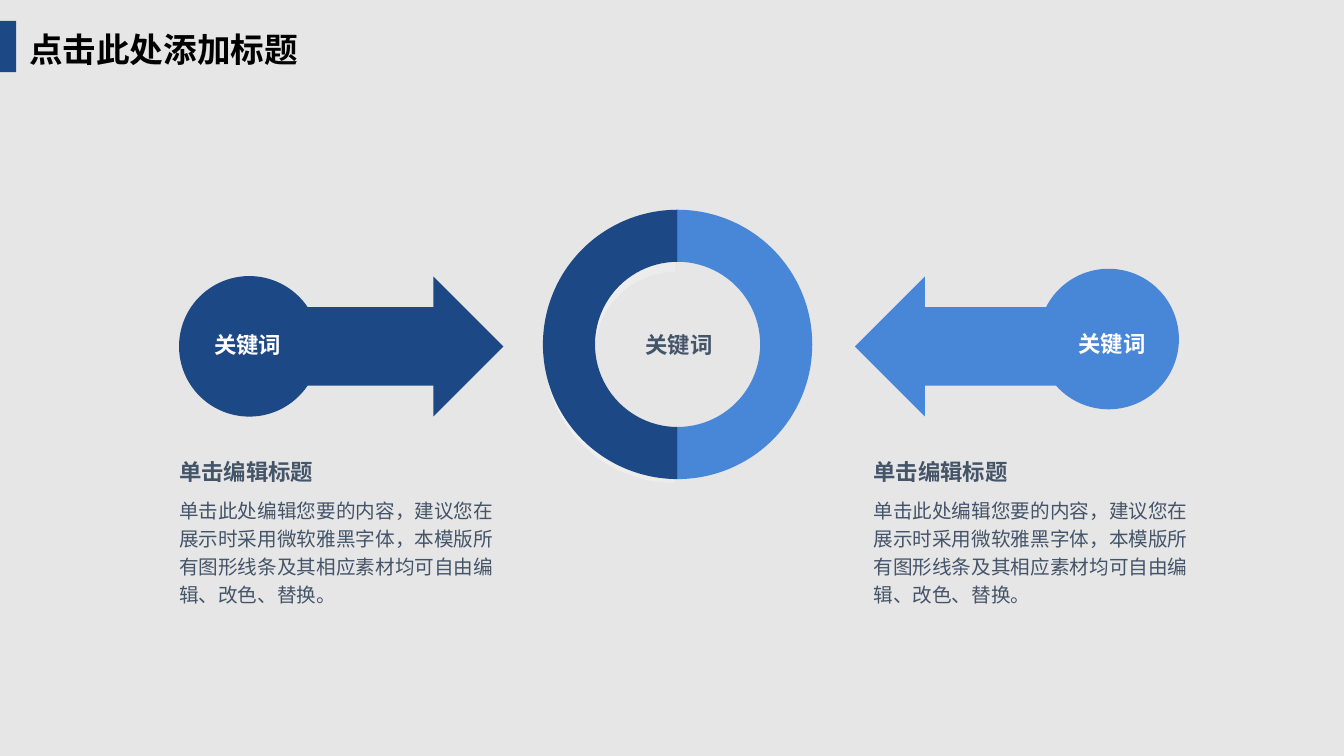
from dataclasses import dataclass

import pptx
import pptx.dml.color
import pptx.enum.shapes
import pptx.enum.text
import pptx.oxml
import pptx.oxml.ns
import pptx.util
from pptx.util import Pt

Shape = pptx.enum.shapes.MSO_SHAPE
Align = pptx.enum.text.PP_ALIGN


@dataclass(frozen=True)
class Theme:
    background: str = "E7E6E6"
    dark_blue: str = "1C4885"
    light_blue: str = "4886D8"
    slate: str = "445469"
    white: str = "FFFFFF"
    black: str = "000000"
    title_font: str = "Noto Sans CJK SC"
    body_font: str = "Arial"
    title_size: int = 24
    heading_size: int = 16
    body_size: int = 14


THEME = Theme()


@dataclass(frozen=True)
class Box:
    left: float
    top: float
    width: float
    height: float

    def lengths(self) -> tuple:
        return Pt(self.left), Pt(self.top), Pt(self.width), Pt(self.height)


@dataclass(frozen=True)
class Figure:
    kind: Shape
    box: Box
    color: str
    adjustments: tuple = ()


@dataclass(frozen=True)
class Label:
    text: str
    box: Box
    size: int = THEME.heading_size
    color: str = THEME.slate
    bold: bool = True
    align: Align = Align.LEFT
    line_spacing: float = 1.0
    font: str = THEME.body_font
    margins: tuple = (0, 0)


def rgb(color: str) -> pptx.dml.color.RGBColor:
    return pptx.dml.color.RGBColor.from_string(color)


def draw_figure(slide, figure: Figure):
    shape = slide.shapes.add_shape(figure.kind, *figure.box.lengths())
    shape.shadow.inherit = False
    shape.fill.solid()
    shape.fill.fore_color.rgb = rgb(figure.color)
    shape.line.fill.background()
    for index, value in enumerate(figure.adjustments):
        shape.adjustments[index] = value
    return shape


def draw_label(slide, label: Label) -> None:
    frame = slide.shapes.add_textbox(*label.box.lengths()).text_frame
    frame.word_wrap = True
    frame.auto_size = pptx.enum.text.MSO_AUTO_SIZE.SHAPE_TO_FIT_TEXT
    horizontal, vertical = label.margins
    frame.margin_left = frame.margin_right = Pt(horizontal)
    frame.margin_top = frame.margin_bottom = Pt(vertical)
    paragraph = frame.paragraphs[0]
    paragraph.text = label.text
    paragraph.alignment = label.align
    paragraph.line_spacing = label.line_spacing
    paragraph.font.name = label.font
    paragraph.font.size = Pt(label.size)
    paragraph.font.bold = label.bold
    paragraph.font.color.rgb = rgb(label.color)


def fade_fill(shape, color: str, start_alpha: int, end_alpha: int) -> None:
    """Fade the fill from left to right between two opacities in percent."""
    shape.fill.gradient()
    shape.fill.gradient_angle = 0
    for stop, alpha in zip(shape.fill.gradient_stops, (start_alpha, end_alpha)):
        stop.color.rgb = rgb(color)
    namespace = pptx.oxml.ns.nsdecls("a")
    colors = shape.fill._xPr.iter(pptx.oxml.ns.qn("a:srgbClr"))
    for element, alpha in zip(colors, (start_alpha, end_alpha)):
        element.append(pptx.oxml.parse_xml(f'<a:alpha {namespace} val="{alpha * 1000}"/>'))


def half_ring(box: Box, color: str, start: int, end: int, thickness: float) -> Figure:
    # Angles are stored in 60000ths of a degree, adjustments in 100000ths
    angles = (start * 0.6, end * 0.6)
    return Figure(Shape.BLOCK_ARC, box, color, (*angles, thickness / box.width))


def main() -> None:
    presentation = pptx.Presentation()
    presentation.slide_width, presentation.slide_height = Pt(960), Pt(540)
    slide = presentation.slides.add_slide(presentation.slide_layouts[6])
    slide.background.fill.solid()
    slide.background.fill.fore_color.rgb = rgb(THEME.background)

    # Title with its accent bar
    draw_label(slide, Label("点击此处添加标题", Box(13.7, 17.3, 208, 36.7), THEME.title_size,
                            THEME.black, font=THEME.title_font, margins=(7.2, 3.6)))
    draw_figure(slide, Figure(Shape.RECTANGLE, Box(0, 15, 11.5, 36.5), THEME.dark_blue))

    # Arrows and discs pointing at the ring
    arrow = (0.56, 0.5)
    disc = 100.4
    for figure in (
        Figure(Shape.RIGHT_ARROW, Box(219, 197.5, 140.6, 100), THEME.dark_blue, arrow),
        Figure(Shape.LEFT_ARROW, Box(610.7, 197.5, 149, 100), THEME.light_blue, arrow),
        Figure(Shape.OVAL, Box(741.7, 192, disc, disc), THEME.light_blue),
        Figure(Shape.OVAL, Box(127.9, 197.2, disc, disc), THEME.dark_blue),
    ):
        draw_figure(slide, figure)

    # Ring: pale highlight below two halves
    ring = Box(387.8, 149.8, 192.4, 192.4)
    highlight = draw_figure(slide, half_ring(Box(388.8, 158.4, 186.5, 186.5), THEME.white, 90, 270, 36))
    fade_fill(highlight, THEME.white, 45, 22)
    draw_figure(slide, half_ring(ring, THEME.light_blue, 270, 90, 37.2))
    draw_figure(slide, half_ring(ring, THEME.dark_blue, 90, 270, 37.2))

    # Heading and description on each side
    description = "单击此处编辑您要的内容，建议您在展示时采用微软雅黑字体，本模版所有图形线条及其相应素材均可自由编辑、改色、替换。"
    for left in (127.9, 623.9):
        draw_label(slide, Label(description, Box(left, 352.8, 237, 81.4), THEME.body_size,
                                bold=False, line_spacing=1.2))
        draw_label(slide, Label("单击编辑标题", Box(left, 327.3, 154, 19.4)))

    # Keywords
    for left, top, color in (
        (123, 236.7, THEME.white),
        (740.3, 235.7, THEME.white),
        (431, 236.7, THEME.slate),
    ):
        draw_label(slide, Label("关键词", Box(left, top, 108, 19.4), color=color, align=Align.CENTER))

    presentation.save("out.pptx")


if __name__ == "__main__":
    main()
